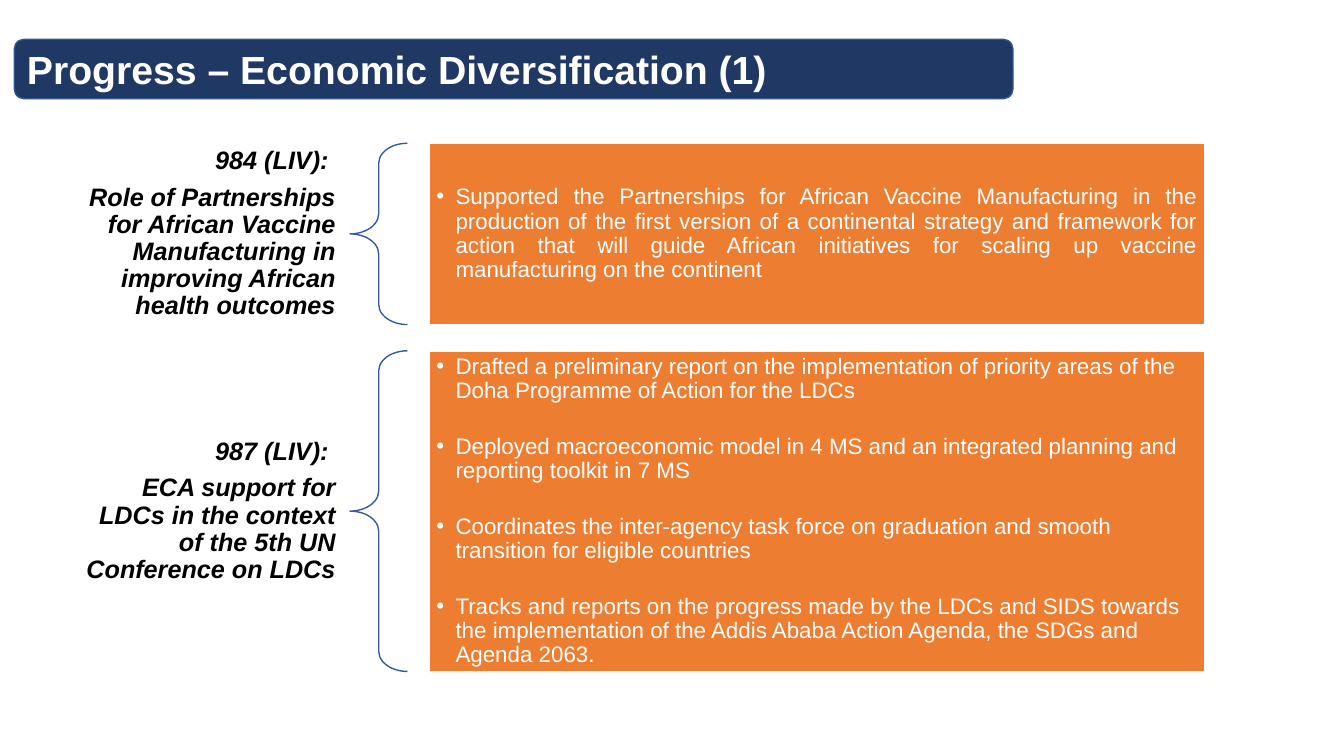
from lxml import etree
from pptx import Presentation
from pptx.dml.color import RGBColor
from pptx.enum.shapes import MSO_SHAPE
from pptx.enum.text import MSO_ANCHOR, MSO_AUTO_SIZE, PP_ALIGN
from pptx.oxml.ns import qn
from pptx.util import Cm, Pt

ROUNDED, BRACE = MSO_SHAPE.ROUNDED_RECTANGLE, MSO_SHAPE.LEFT_BRACE
MIDDLE, NO_FIT = MSO_ANCHOR.MIDDLE, MSO_AUTO_SIZE.NONE
LEFT, RIGHT, JUSTIFY = PP_ALIGN.LEFT, PP_ALIGN.RIGHT, PP_ALIGN.JUSTIFY
TWO_CONTENT = 3

TITLE_FONT = {"name": "Arial", "size": Pt(28), "bold": True}
LABEL_FONT = {"name": "Arial", "size": Pt(18), "bold": True, "italic": True}
ACTION_FONT = {"name": "Arial", "size": Pt(16)}

RESOLUTIONS = [
    {
        "box": (1.65, 3.61, 28.7, 4.57),
        "label": ["984 (LIV): ",
                  "Role of Partnerships for African Vaccine Manufacturing in improving "
                  "African health outcomes"],
        "actions": ["Supported the Partnerships for African Vaccine Manufacturing in the "
                    "production of the first version of a continental strategy and framework "
                    "for action that will guide African initiatives for scaling up vaccine "
                    "manufacturing on the continent"],
        "align": JUSTIFY,
    },
    {
        "box": (1.65, 8.84, 28.7, 8.08),
        "label": ["987 (LIV): ",
                  "ECA support for LDCs in the context of the 5th UN Conference on LDCs"],
        "actions": ["Drafted a preliminary report on the implementation of priority areas of "
                    "the Doha Programme of Action for the LDCs",
                    "Deployed macroeconomic model in 4 MS and an integrated planning and "
                    "reporting toolkit in 7 MS",
                    "Coordinates the inter-agency task force on graduation and smooth "
                    "transition for eligible countries",
                    "Tracks and reports on the progress made by the LDCs and SIDS towards "
                    "the implementation of the Addis Ababa Action Agenda, the SDGs and "
                    "Agenda 2063."],
        "align": LEFT,
    },
]


def colour(target, value):
    target.rgb = RGBColor.from_string(value)


def apply(target, values):
    for name, value in values.items():
        setattr(target, name, value)


def place(part, left, top, width, height):
    apply(part, {"left": Cm(left), "top": Cm(top), "width": Cm(width), "height": Cm(height)})


def paint(part, line, fill=None):
    if fill:
        part.fill.solid()
        colour(part.fill.fore_color, fill)
    else:
        part.fill.background()
    colour(part.line.color, line)
    part.line.width = Pt(1)


def add_bullet(paragraph):
    properties = paragraph._p.get_or_add_pPr()
    properties.set("marL", str(Cm(0.48)))
    properties.set("indent", str(Cm(-0.48)))
    etree.SubElement(properties, qn("a:buChar")).set("char", "•")


def write(part, texts, font, ink, layout, margins, bulleted=False):
    frame = part.text_frame
    across, down = margins
    apply(frame, {"word_wrap": True, "auto_size": NO_FIT, "vertical_anchor": MIDDLE,
                  "margin_left": Cm(across), "margin_right": Cm(across),
                  "margin_top": Cm(down), "margin_bottom": Cm(down)})
    for number, text in enumerate(texts):
        paragraph = frame.add_paragraph() if number else frame.paragraphs[0]
        if bulleted:
            paragraph.level = 1
            add_bullet(paragraph)
        apply(paragraph, {"space_before": Pt(0), "line_spacing": 0.9, **layout})
        if number == len(texts) - 1:
            paragraph.space_after = Pt(2.4)
        words = paragraph.add_run()
        words.text = text
        apply(words.font, font)
        colour(words.font.color, ink)


def title_banner(slide, left, top, width, height):
    banner = slide.shapes.add_shape(ROUNDED, Cm(left), Cm(top), Cm(width), Cm(height))
    banner.shadow.inherit = False
    paint(banner, "325491", "203864")
    heading = slide.shapes.title
    banner._element.addnext(heading._element)
    place(heading, left, top, width, height)
    write(heading, ["Progress – Economic Diversification (1)"], TITLE_FONT, "FFFFFF",
          {"alignment": LEFT, "line_spacing": 1.0}, (0.32, 0.13))


def resolution_row(slide, actions_holder, resolution):
    left, top, width, height = resolution["box"]
    label_width, brace_width, gap = 7.17, 1.45, 0.55
    brace_left = left + label_width
    actions_left = brace_left + brace_width + gap

    label = slide.shapes.add_textbox(Cm(left), Cm(top), Cm(label_width), Cm(height))
    write(label, resolution["label"], LABEL_FONT, "000000",
          {"alignment": RIGHT, "space_after": Pt(6.8)}, (0.36, 0.13))

    brace = slide.shapes.add_shape(BRACE, Cm(brace_left), Cm(top), Cm(brace_width), Cm(height))
    brace.shadow.inherit = False
    brace.adjustments[0] = 0.35
    paint(brace, "365B9D")

    place(actions_holder, actions_left, top, left + width - actions_left, height)
    paint(actions_holder, "FFFFFF", "ED7D31")
    write(actions_holder, resolution["actions"], ACTION_FONT, "FFFFFF",
          {"alignment": resolution["align"], "space_after": Pt(22.6)}, (0.18, 0.18), True)


def main():
    deck = Presentation()
    apply(deck, {"slide_width": Cm(33.87), "slide_height": Cm(19.05)})
    slide = deck.slides.add_slide(deck.slide_layouts[TWO_CONTENT])
    title_banner(slide, 0.36, 0.99, 25.17, 1.5)
    holders = [slide.placeholders[1], slide.placeholders[2]]
    for holder, resolution in zip(holders, RESOLUTIONS):
        resolution_row(slide, holder, resolution)
    deck.save("out.pptx")


if __name__ == "__main__":
    main()
